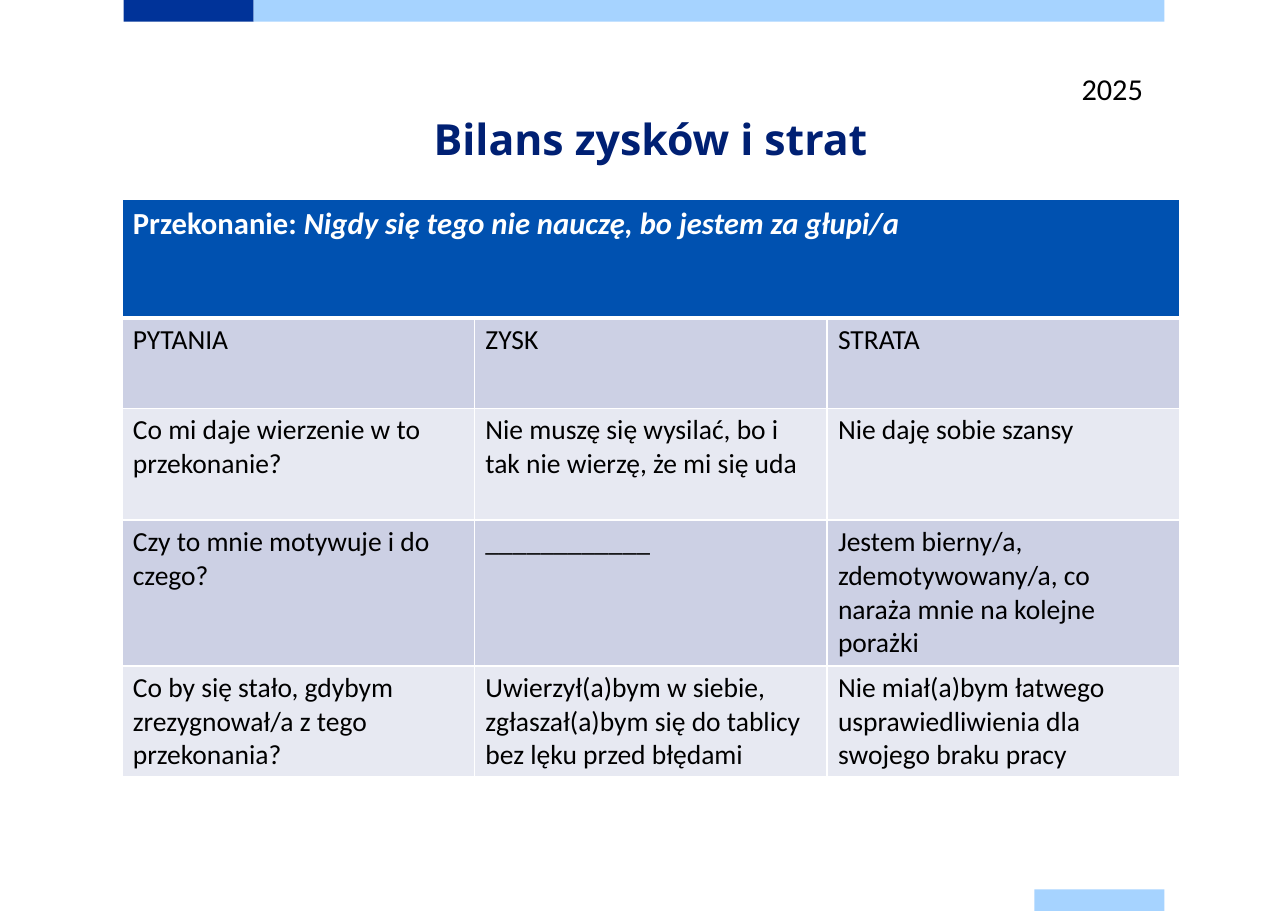
from lxml import etree
from pptx import Presentation
from pptx.dml.color import RGBColor
from pptx.enum.shapes import MSO_SHAPE
from pptx.enum.text import PP_ALIGN
from pptx.oxml.ns import qn
from pptx.util import Cm, Pt

RECT = MSO_SHAPE.RECTANGLE
LEFT, CENTER = PP_ALIGN.LEFT, PP_ALIGN.CENTER
COLORS = {
    "navy": "003399", "sky": "A6D3FF", "title": "002073", "header": "0051B0",
    "odd": "CCD0E4", "even": "E7E9F2", "white": "FFFFFF", "black": "000000",
}
BELIEF = [("Przekonanie: ", False),
          ("Nigdy się tego nie nauczę, bo jestem za głupi/a", True)]
ROWS = [
    ("PYTANIA", "ZYSK", "STRATA"),
    ("Co mi daje wierzenie w to przekonanie?",
     "Nie muszę się wysilać, bo i tak nie wierzę, że mi się uda",
     "Nie daję sobie szansy"),
    ("Czy to mnie motywuje i do czego?",
     "____________",
     "Jestem bierny/a, zdemotywowany/a, co naraża mnie na kolejne porażki"),
    ("Co by się stało, gdybym zrezygnował/a z tego przekonania?",
     "Uwierzył(a)bym w siebie, zgłaszał(a)bym się do tablicy bez lęku przed błędami",
     "Nie miał(a)bym łatwego usprawiedliwienia dla swojego braku pracy"),
]
ROW_HEIGHTS = [2.73, 2.08, 2.58, 3.36, 2.56]


class SlideBuilder:
    """Draws styled elements on the current slide."""

    def __init__(self, slide, font="Calibri"):
        self.s = slide
        self.font = font

    def rgb(self, name):
        return RGBColor.from_string(COLORS[name])

    def bar(self, x, y, w, h, color):
        sp = self.s.shapes.add_shape(RECT, Cm(x), Cm(y), Cm(w), Cm(h))
        sp.shadow.inherit = False
        sp.fill.solid()
        sp.fill.fore_color.rgb = self.rgb(color)
        sp.line.fill.background()

    def run(self, p, text, size, color, bold=False, italic=False, font=None):
        r = p.add_run()
        r.text = text
        r.font.name = font or self.font
        r.font.size = Pt(size)
        r.font.bold = bold
        r.font.italic = italic
        r.font.color.rgb = self.rgb(color)

    def text(self, x, y, w, h, text, size, color, bold=False, font=None,
             align=LEFT, spacing=None, inset=None):
        tf = self.s.shapes.add_textbox(Cm(x), Cm(y), Cm(w), Cm(h)).text_frame
        tf.word_wrap = True
        if inset is not None:
            tf.margin_left = tf.margin_right = Cm(inset)
            tf.margin_top = tf.margin_bottom = Cm(inset)
        p = tf.paragraphs[0]
        p.alignment = align
        if spacing:
            p.line_spacing = Pt(spacing)
        self.run(p, text, size, color, bold, font=font)

    def style_cell(self, cell, fill, top=1, bottom=1):
        tc_pr = cell._tc.get_or_add_tcPr()
        for side, width in (("L", 1), ("R", 1), ("T", top), ("B", bottom)):
            ln = etree.SubElement(tc_pr, qn(f"a:ln{side}"), w=str(Pt(width)))
            solid = etree.SubElement(ln, qn("a:solidFill"))
            etree.SubElement(solid, qn("a:srgbClr"), val=COLORS["white"])
        cell.fill.solid()
        cell.fill.fore_color.rgb = self.rgb(fill)

    def table(self, x, y, col_width, heights, header, rows):
        n = len(rows[0])
        table = self.s.shapes.add_table(len(heights), n, Cm(x), Cm(y),
                                        Cm(col_width * n), Cm(sum(heights))).table
        for col in table.columns:
            col.width = Cm(col_width)
        for row, height in zip(table.rows, heights):
            row.height = Cm(height)
        for c in range(n):
            self.style_cell(table.cell(0, c), "header", bottom=3)
        table.cell(0, 0).merge(table.cell(0, n - 1))
        for text, italic in header:
            self.run(table.cell(0, 0).text_frame.paragraphs[0], text, 20,
                     "white", True, italic)
        for i, texts in enumerate(rows, 1):
            for c, text in enumerate(texts):
                cell = table.cell(i, c)
                self.style_cell(cell, "odd" if i % 2 else "even",
                                top=3 if i == 1 else 1)
                self.run(cell.text_frame.paragraphs[0], text, 18, "black")


def main():
    prs = Presentation()
    prs.slide_width, prs.slide_height = Cm(29.7), Cm(21)
    b = SlideBuilder(prs.slides.add_slide(prs.slide_layouts[6]))
    b.bar(2.85, 0, 3, 0.5, "navy")
    b.bar(5.85, 0, 21, 0.5, "sky")
    b.bar(23.85, 20.5, 3, 0.5, "sky")
    b.text(3, 2.52, 24, 3, "Bilans zysków i strat", 28, "title", True,
           "Open Sans", CENTER, 36, 0)
    b.text(24.69, 1.5, 5, 1.02, "2025", 19.8, "black")
    b.table(2.81, 4.6, 8.13, ROW_HEIGHTS, BELIEF, ROWS)
    prs.save("out.pptx")


if __name__ == "__main__":
    main()
